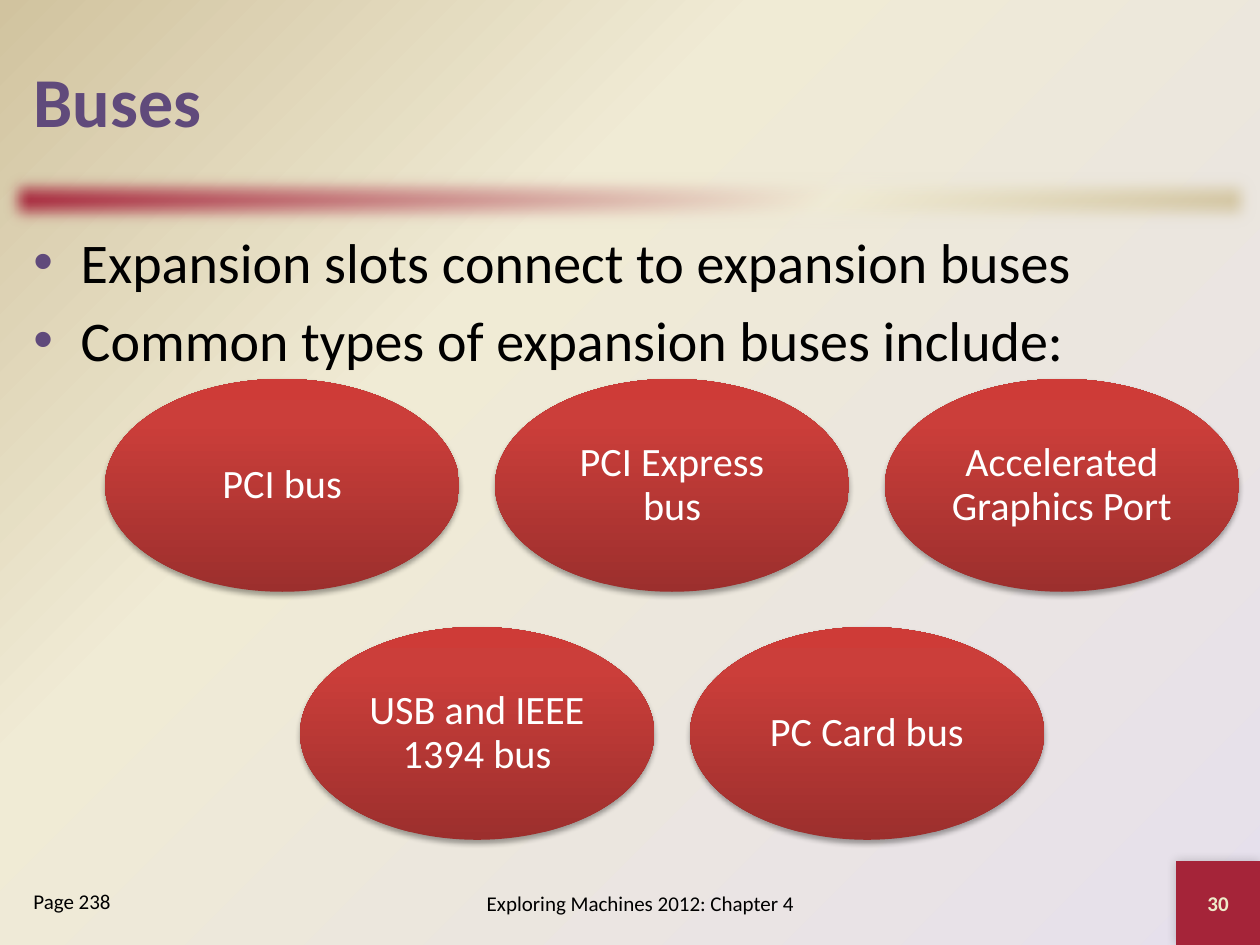
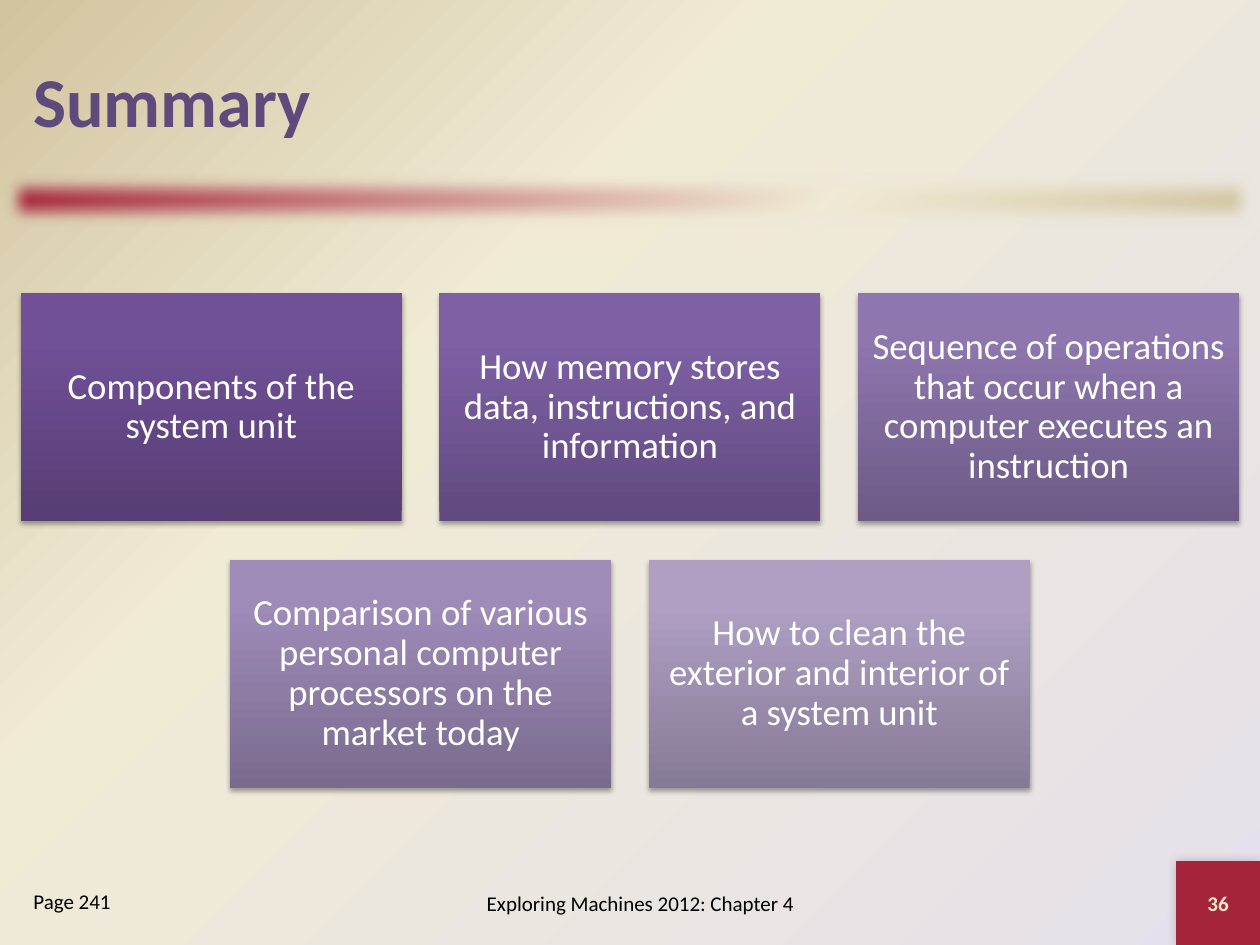
"""Build the Buses and Summary slides of a computer hardware chapter."""
import pptx
import pptx.dml.color
import pptx.enum.shapes
import pptx.enum.text
import pptx.oxml
import pptx.oxml.ns
import pptx.util

Cm = pptx.util.Cm
Pt = pptx.util.Pt
RGBColor = pptx.dml.color.RGBColor
SHAPE = pptx.enum.shapes.MSO_SHAPE
ALIGN = pptx.enum.text.PP_ALIGN
ANCHOR = pptx.enum.text.MSO_ANCHOR
NAMESPACE = pptx.oxml.ns.nsdecls("a")

PURPLE = RGBColor(0x60, 0x4A, 0x7B)
CRIMSON = RGBColor(0xA5, 0x24, 0x39)
CREAM = RGBColor(0xF0, 0xEB, 0xD5)
TAN = RGBColor(0xD1, 0xC3, 0x9F)
LAVENDER = RGBColor(0xE6, 0xE0, 0xEC)
IVORY = RGBColor(0xEE, 0xEB, 0xCA)
BLACK = RGBColor(0, 0, 0)
WHITE = RGBColor(0xFF, 0xFF, 0xFF)
RED_SHADES = tuple(map(RGBColor.from_string, ("9C2F2D", "CB3E3A", "CE3B37")))
PURPLE_SHADES = [
    tuple(map(RGBColor.from_string, shades))
    for shades in (
        ("563D74", "705097", "704F99"),
        ("614A7F", "7E60A5", "7F60A7"),
        ("6D5B86", "8E76AE", "8E75B0"),
        ("796B8E", "9E8BB8", "9E8BBA"),
        ("867B96", "AE9FC3", "AE9FC4"),
    )
]

DIAGONAL = '<a:lin ang="2700000" scaled="0"/>'
UPWARD = '<a:lin ang="16200000" scaled="0"/>'
FROM_CORNER = '<a:path path="circle"><a:fillToRect l="100000" t="100000"/></a:path>'
SOFT_EDGE = f'<a:softEdge {NAMESPACE} rad="127000"/>'
SHADOW = (
    f'<a:outerShdw {NAMESPACE} blurRad="{{}}" dist="{{}}" dir="{{}}" rotWithShape="0">'
    '<a:srgbClr val="000000"><a:alpha val="{}"/></a:srgbClr></a:outerShdw>'
)
CARD_SHADOW = SHADOW.format(Pt(3.1), Pt(1.8), 5400000, 35000)
CORNER_SHADOW = SHADOW.format(Pt(6), 0, 13500000, 20000)


def write_text(box, *lines, size, color, bold=False, align=ALIGN.LEFT,
               anchor=ANCHOR.MIDDLE, spacing=None, inset=None, bullet=None):
    """Fill a box with one formatted paragraph per line."""
    frame = box.text_frame
    frame.text = "\n".join(lines)
    frame.word_wrap = True
    frame.auto_size = pptx.enum.text.MSO_AUTO_SIZE.NONE
    frame.vertical_anchor = anchor
    if inset is not None:
        frame.margin_left = frame.margin_right = inset
        frame.margin_top = frame.margin_bottom = inset
    for para in frame.paragraphs:
        para.alignment = align
        if spacing:
            para.line_spacing = spacing
        for markup in bullet or ():
            para._p.get_or_add_pPr().append(pptx.oxml.parse_xml(markup))
        for span in para.runs:
            span.font.name = "Calibri"
            span.font.size = Pt(size)
            span.font.bold = bold
            span.font.color.rgb = color


def paint(owner, fill, colors, direction=None, middle=65, effect=None):
    """Fill an owner with one colour or three gradient colours, and an effect."""
    if len(colors) == 1:
        fill.solid()
        fill.fore_color.rgb = colors[0]
    else:
        fill.gradient()
        gradient = owner.element.xpath(".//a:gradFill")[0]
        stops = "".join(
            f'<a:gs pos="{position * 1000}"><a:srgbClr val="{color}"/></a:gs>'
            for position, color in zip((0, middle, 100), colors)
        )
        gradient.getparent().replace(gradient, pptx.oxml.parse_xml(
            f'<a:gradFill {NAMESPACE} rotWithShape="1"><a:gsLst>{stops}</a:gsLst>'
            f'{direction}</a:gradFill>'))
    if effect:
        owner.line.fill.background()
        owner.shadow.inherit = False
        effects = owner.element.spPr.find(pptx.oxml.ns.qn("a:effectLst"))
        effects.append(pptx.oxml.parse_xml(effect))


PURPLE_BULLET = (
    f'<a:buClr {NAMESPACE}><a:srgbClr val="{PURPLE}"/></a:buClr>',
    f'<a:buChar {NAMESPACE} char="•"/>',
)
NO_BULLET = (f'<a:buNone {NAMESPACE}/>',)

SLIDES = [
    dict(
        title="Buses", layout=3, page_label="Page 238", number="30",
        points=("Expansion slots connect to expansion buses",
                "Common types of expansion buses include:"),
        cards=("PCI bus", "PCI Express bus", "Accelerated Graphics Port",
               "USB and IEEE 1394 bus", "PC Card bus"),
        shape=SHAPE.OVAL, shades=[RED_SHADES] * 5, size=23, inset=0.25,
        left=2.12, top=7.64, width=7.14, height=4.29, column_step=7.86, row_step=5,
    ),
    dict(
        title="Summary", layout=1, page_label="Page 241", number="36", points=(),
        cards=("Components of the system unit",
               "How memory stores data, instructions, and information",
               "Sequence of operations that occur when a computer executes an instruction",
               "Comparison of various personal computer processors on the market today",
               "How to clean the exterior and interior of a system unit"),
        shape=SHAPE.RECTANGLE, shades=PURPLE_SHADES, size=21, inset=0.23,
        left=0.42, top=5.91, width=7.68, height=4.6, column_step=8.44, row_step=5.37,
    ),
]

deck = pptx.Presentation()
deck.slide_width = Cm(25.4)
deck.slide_height = Cm(19.05)
master = deck.slide_master
paint(master, master.background.fill, (LAVENDER, CREAM, TAN), FROM_CORNER)

for content in SLIDES:
    page = deck.slides.add_slide(deck.slide_layouts[content["layout"]])

    band = page.shapes.add_shape(SHAPE.RECTANGLE, 0, Cm(3.39), Cm(25.4), Cm(1.27))
    paint(band, band.fill, (CRIMSON, CREAM, TAN), DIAGONAL, effect=SOFT_EDGE)

    title = page.shapes.title
    title.left, title.top, title.width, title.height = Cm(0.42), Cm(0.42), Cm(24.55), Cm(3.18)
    write_text(title, content["title"], size=40, color=PURPLE, bold=True)

    *lists, page_label = list(page.placeholders)[1:]
    for body in lists:
        body.left, body.top, body.width, body.height = Cm(0.42), Cm(4.45), Cm(24.55), Cm(12.9)
        write_text(body, *content["points"], size=32, color=BLACK,
                   anchor=ANCHOR.TOP, bullet=PURPLE_BULLET)

    page_label.left, page_label.top = Cm(0.42), Cm(17.78)
    page_label.width, page_label.height = Cm(4.65), Cm(1.27)
    write_text(page_label, content["page_label"], size=12, color=BLACK,
               anchor=ANCHOR.TOP, bullet=NO_BULLET)

    footer = page.shapes.add_textbox(Cm(7.62), Cm(17.57), Cm(10.58), Cm(1.27))
    write_text(footer, "Exploring Machines 2012: Chapter 4", size=12, color=BLACK,
               align=ALIGN.CENTER)

    corner = page.shapes.add_shape(SHAPE.RECTANGLE, Cm(23.71), Cm(17.36), Cm(1.69), Cm(1.69))
    paint(corner, corner.fill, (CRIMSON,), effect=CORNER_SHADOW)
    write_text(corner, content["number"], size=12, color=IVORY, bold=True,
               align=ALIGN.CENTER)

    for index, (label, shades) in enumerate(zip(content["cards"], content["shades"])):
        row, column = divmod(index, 3)
        card = page.shapes.add_shape(
            content["shape"],
            Cm(content["left"] + (column + row / 2) * content["column_step"]),
            Cm(content["top"] + row * content["row_step"]),
            Cm(content["width"]), Cm(content["height"]))
        paint(card, card.fill, shades, UPWARD, middle=80, effect=CARD_SHADOW)
        write_text(card, label, size=content["size"], color=WHITE, align=ALIGN.CENTER,
                   spacing=0.9, inset=Cm(content["inset"]))

deck.save("out.pptx")
